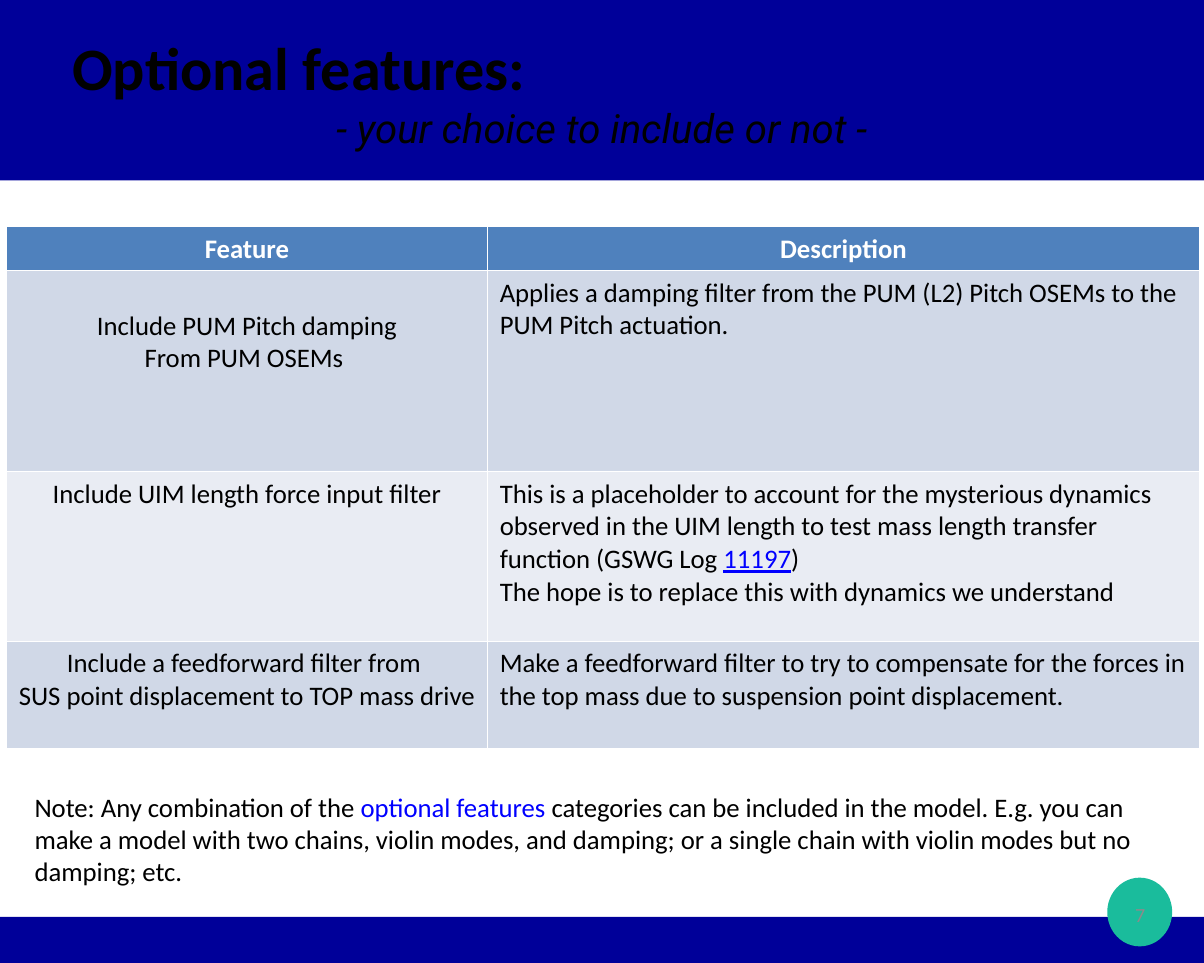
from pptx import Presentation
from pptx.dml.color import RGBColor
from pptx.enum.shapes import MSO_SHAPE
from pptx.enum.text import MSO_ANCHOR, MSO_AUTO_SIZE, PP_ALIGN
from pptx.util import Cm, Pt

COLORS = {
    "navy": "000099", "teal": "1ABC9C", "head": "4F81BD", "odd": "D0D8E7",
    "even": "E9ECF3", "white": "FFFFFF", "black": "000000",
    "blue": "0000FF", "gray": "8B8B8B",
}
WIDTH, HEIGHT = 25.4, 20.32

FEATURES = [
    (["Include PUM Pitch damping", "From PUM OSEMs "],
     [["Applies a damping filter from the PUM (L2) Pitch OSEMs to the "
       "PUM Pitch actuation."]]),
    (["Include UIM length force input filter"],
     [["This is a placeholder to account for the mysterious dynamics observed "
       "in the UIM length to test mass length transfer function (GSWG Log ",
       "11197", ")"],
      ["The hope is to replace this with dynamics we understand"]]),
    (["Include a feedforward filter from ",
      "SUS point displacement to TOP mass drive"],
     [["Make a feedforward filter to try to compensate for the forces in the "
       "top mass due to suspension point displacement."]]),
]
NOTE = [
    "Note: Any combination of the ", "optional features ",
    "categories can be included in the model. E.g. you can make a model with "
    "two chains, violin modes, and damping; or a single chain with violin "
    "modes but no damping; etc.",
]


def color(name):
    return RGBColor.from_string(COLORS[name])


def style(run, size=16, tint="black", face="Calibri", bold=False, italic=False):
    font = run.font
    font.size, font.name = Pt(size), face
    font.bold, font.italic = bold, italic
    font.color.rgb = color(tint)


def write(frame, lines, align=PP_ALIGN.LEFT, **look):
    """Fill a frame with lines, each a list of run texts; the second run is blue."""
    frame.text = "\n".join("" for _ in lines)
    for para, texts in zip(frame.paragraphs, lines):
        para.alignment = align
        for index, text in enumerate(texts):
            run = para.add_run()
            run.text = text
            style(run, **look)
            if index == 1:
                run.font.color.rgb = color("blue")


def add_block(slide, kind, tint, *box):
    shape = slide.shapes.add_shape(kind, *map(Cm, box))
    shape.shadow.inherit = False
    shape.fill.solid()
    shape.fill.fore_color.rgb = color(tint)
    shape.line.fill.background()


def add_text(slide, box, lines, anchor=MSO_ANCHOR.TOP, **look):
    frame = slide.shapes.add_textbox(*map(Cm, box)).text_frame
    frame.word_wrap = True
    frame.vertical_anchor = anchor
    write(frame, lines, **look)


def set_title(slide):
    title = slide.shapes.title
    title.left, title.top, title.width, title.height = map(
        Cm, (1.27, 0.23, 22.86, 3.38))
    frame = title.text_frame
    frame.auto_size = MSO_AUTO_SIZE.NONE
    frame.vertical_anchor = MSO_ANCHOR.MIDDLE
    frame.text = "Optional features:\n- your choice to include or not -"
    head, sub = frame.paragraphs
    head.alignment, sub.alignment = PP_ALIGN.LEFT, PP_ALIGN.CENTER
    style(head.runs[0], 36, bold=True)
    style(sub.runs[0], 24, face="Roboto", italic=True)
    # Bring the title in front of the top band
    slide.shapes.element.append(title.element)


def set_cell(cell, fill, lines, **look):
    cell.fill.solid()
    cell.fill.fore_color.rgb = color(fill)
    write(cell.text_frame, lines, **look)


def add_grid(slide):
    heights = (0.91, 4.24, 3.58, 2.26)
    table = slide.shapes.add_table(
        len(heights), 2, Cm(0.13), Cm(4.78), Cm(25.17), Cm(sum(heights))).table
    for column, width in zip(table.columns, (10.16, 15.01)):
        column.width = Cm(width)
    for row, height in zip(table.rows, heights):
        row.height = Cm(height)
    for col, text in enumerate(("Feature", "Description")):
        set_cell(table.cell(0, col), "head", [[text]],
                 align=PP_ALIGN.CENTER, tint="white", bold=True)
    for row, (names, about) in enumerate(FEATURES, 1):
        fill = "odd" if row % 2 else "even"
        set_cell(table.cell(row, 0), fill, [[name] for name in names],
                 align=PP_ALIGN.CENTER)
        set_cell(table.cell(row, 1), fill, about)
    table.cell(1, 0).margin_top = Cm(0.82)
    link = table.cell(2, 1).text_frame.paragraphs[0].runs[1]
    link.font.underline = True


def main():
    deck = Presentation()
    deck.slide_width, deck.slide_height = Cm(WIDTH), Cm(HEIGHT)
    slide = deck.slides.add_slide(deck.slide_layouts[5])
    add_block(slide, MSO_SHAPE.RECTANGLE, "navy", 0, 19.35, WIDTH, HEIGHT - 19.35)
    add_block(slide, MSO_SHAPE.RECTANGLE, "navy", 0, 0, WIDTH, 3.81)
    add_block(slide, MSO_SHAPE.OVAL, "teal", 23.36, 18.52, 1.37, 1.45)
    set_title(slide)
    add_text(slide, (18.49, 18.75, 5.92, 1.09), [["7"]], MSO_ANCHOR.MIDDLE,
             align=PP_ALIGN.RIGHT, size=12, tint="gray")
    add_grid(slide)
    add_text(slide, (0.48, 16.56, 24.56, 2.29), [NOTE])
    deck.save("out.pptx")


if __name__ == "__main__":
    main()
